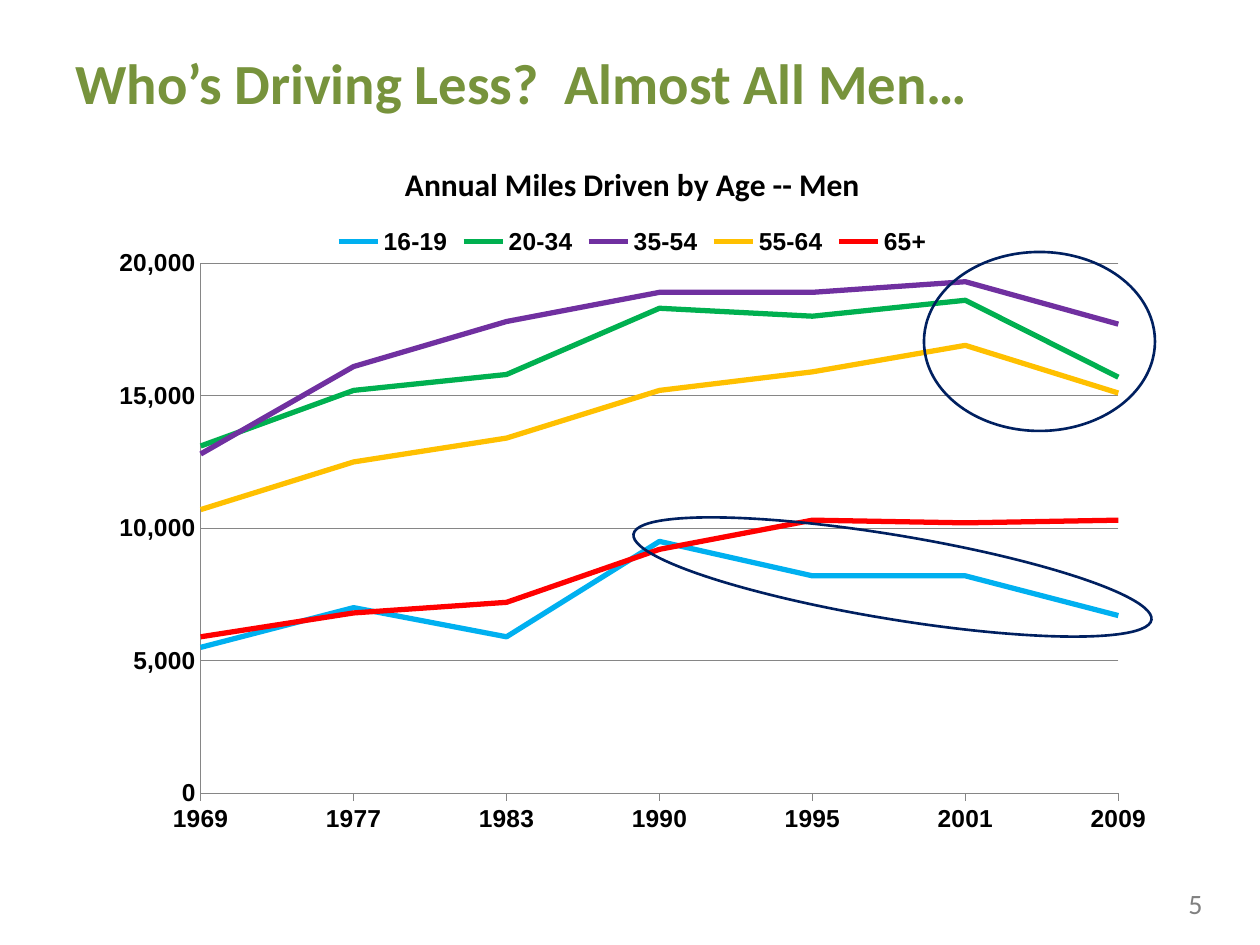
from lxml import etree
from pptx import Presentation
from pptx.chart.data import CategoryChartData
from pptx.dml.color import RGBColor
from pptx.enum.chart import XL_CHART_TYPE, XL_LEGEND_POSITION, XL_MARKER_STYLE, XL_TICK_MARK
from pptx.enum.shapes import MSO_SHAPE
from pptx.enum.text import MSO_ANCHOR, PP_ALIGN
from pptx.oxml.ns import qn
from pptx.util import Emu, Pt

LINE_CHART = XL_CHART_TYPE.LINE
LEGEND_TOP = XL_LEGEND_POSITION.TOP
NO_MARKER = XL_MARKER_STYLE.NONE
TICK_NONE, TICK_OUT = XL_TICK_MARK.NONE, XL_TICK_MARK.OUTSIDE
OVAL = MSO_SHAPE.OVAL
MIDDLE, TOP = MSO_ANCHOR.MIDDLE, MSO_ANCHOR.TOP
LEFT, RIGHT = PP_ALIGN.LEFT, PP_ALIGN.RIGHT

BLACK = RGBColor(0x00, 0x00, 0x00)
GRAY = RGBColor(0x80, 0x80, 0x80)
AXIS_GRAY = RGBColor(0x86, 0x86, 0x86)
OLIVE = RGBColor(0x77, 0x93, 0x3C)
NAVY = RGBColor(0x00, 0x20, 0x60)
BLUE = RGBColor(0x00, 0xB0, 0xF0)
GREEN = RGBColor(0x00, 0xB0, 0x50)
PURPLE = RGBColor(0x70, 0x30, 0xA0)
AMBER = RGBColor(0xFF, 0xC0, 0x00)
RED = RGBColor(0xFF, 0x00, 0x00)

# Content
HEADLINE = "Who’s Driving Less?  Almost All Men…"
PAGE_NUMBER = "5"
CHART_TITLE = "Annual Miles Driven by Age -- Men"
YEARS = ["1969", "1977", "1983", "1990", "1995", "2001", "2009"]
AGE_GROUPS = [
    ("16-19", BLUE, [5500, 7000, 5900, 9500, 8200, 8200, 6700]),
    ("20-34", GREEN, [13100, 15200, 15800, 18300, 18000, 18600, 15700]),
    ("35-54", PURPLE, [12800, 16100, 17800, 18900, 18900, 19300, 17700]),
    ("55-64", AMBER, [10700, 12500, 13400, 15200, 15900, 16900, 15100]),
    ("65+", RED, [5900, 6800, 7200, 9200, 10300, 10200, 10300]),
]
# Ovals around the declines: box in px, rotation in degrees
DECLINES = [((924, 252, 231, 179), 0), ((630, 535, 525, 84), 9.4)]

HEADLINE_BOX = (63, 38, 1134, 88)
PAGE_BOX = (1176, 880, 63, 47)
CHART_BOX = (102, 136, 1061, 703)
PLOT_AREA = {"x": 0.093, "y": 0.181, "w": 0.865, "h": 0.754}

PX = 914400 // 126


def emu(box):
    return [Emu(length * PX) for length in box]


def set_font(font, face, size, color, bold):
    font.name, font.size, font.bold = face, Pt(size), bold
    font.color.rgb = color


def add_label(slide, text, box, size, color, bold, align, anchor):
    frame = slide.shapes.add_textbox(*emu(box)).text_frame
    frame.word_wrap = True
    frame.vertical_anchor = anchor
    paragraph = frame.paragraphs[0]
    paragraph.text = text
    paragraph.alignment = align
    set_font(paragraph.font, "Calibri", size, color, bold)


def fix_plot_area(chart):
    plot_area = chart._chartSpace.chart.plotArea
    for old in plot_area.findall(qn("c:layout")):
        plot_area.remove(old)
    layout = etree.Element(qn("c:layout"))
    manual = etree.SubElement(layout, qn("c:manualLayout"))
    settings = {"layoutTarget": "inner", "xMode": "edge", "yMode": "edge", **PLOT_AREA}
    for tag, value in settings.items():
        etree.SubElement(manual, qn(f"c:{tag}")).set("val", str(value))
    plot_area.insert(0, layout)


def start_lines_on_axis(value_axis):
    axis = value_axis._element
    for old in axis.findall(qn("c:crossBetween")):
        axis.remove(old)
    crossing = etree.Element(qn("c:crossBetween"))
    crossing.set("val", "midCat")
    axis.find(qn("c:crosses")).addnext(crossing)


def add_mileage_chart(slide):
    data = CategoryChartData(number_format="#,##0")
    data.categories = YEARS
    for name, _, miles in AGE_GROUPS:
        data.add_series(name, miles)
    chart = slide.shapes.add_chart(LINE_CHART, *emu(CHART_BOX), data).chart
    set_font(chart.font, "Calibri", 10, BLACK, False)

    # Title and legend
    chart.has_title = True
    title = chart.chart_title.text_frame.paragraphs[0]
    title.text = CHART_TITLE
    set_font(title.font, "Calibri", 18, BLACK, True)
    chart.chart_title.include_in_layout = False
    chart.has_legend = True
    chart.legend.position = LEGEND_TOP
    chart.legend.include_in_layout = False
    set_font(chart.legend.font, "Arial", 14, BLACK, True)

    # Axes
    years, miles = chart.category_axis, chart.value_axis
    for axis, tick in ((years, TICK_OUT), (miles, TICK_NONE)):
        axis.major_tick_mark, axis.minor_tick_mark = tick, TICK_NONE
        axis.format.line.color.rgb = AXIS_GRAY
        axis.format.line.width = Pt(0.75)
        set_font(axis.tick_labels.font, "Arial", 14, BLACK, True)
    start_lines_on_axis(miles)
    miles.minimum_scale, miles.maximum_scale, miles.major_unit = 0, 20000, 5000
    miles.tick_labels.number_format = "#,##0"
    miles.tick_labels.number_format_is_linked = False
    miles.has_major_gridlines = True
    miles.major_gridlines.format.line.color.rgb = AXIS_GRAY
    miles.major_gridlines.format.line.width = Pt(0.75)

    # Age group lines
    for series, (_, color, _) in zip(chart.plots[0].series, AGE_GROUPS):
        series.smooth = False
        series.marker.style = NO_MARKER
        series.format.line.color.rgb = color
        series.format.line.width = Pt(3)
    fix_plot_area(chart)


def main():
    deck = Presentation()
    deck.slide_width, deck.slide_height = emu((1260, 945))
    slide = deck.slides.add_slide(deck.slide_layouts[6])

    add_label(slide, PAGE_NUMBER, PAGE_BOX, 16, GRAY, False, LEFT, TOP)
    add_label(slide, HEADLINE, HEADLINE_BOX, 32.4, OLIVE, True, LEFT, MIDDLE)
    add_mileage_chart(slide)

    for box, angle in DECLINES:
        decline = slide.shapes.add_shape(OVAL, *emu(box))
        decline.rotation = angle
        decline.shadow.inherit = False
        decline.fill.background()
        decline.line.color.rgb = NAVY
        decline.line.width = Pt(1.5)

    deck.save("out.pptx")


if __name__ == "__main__":
    main()
